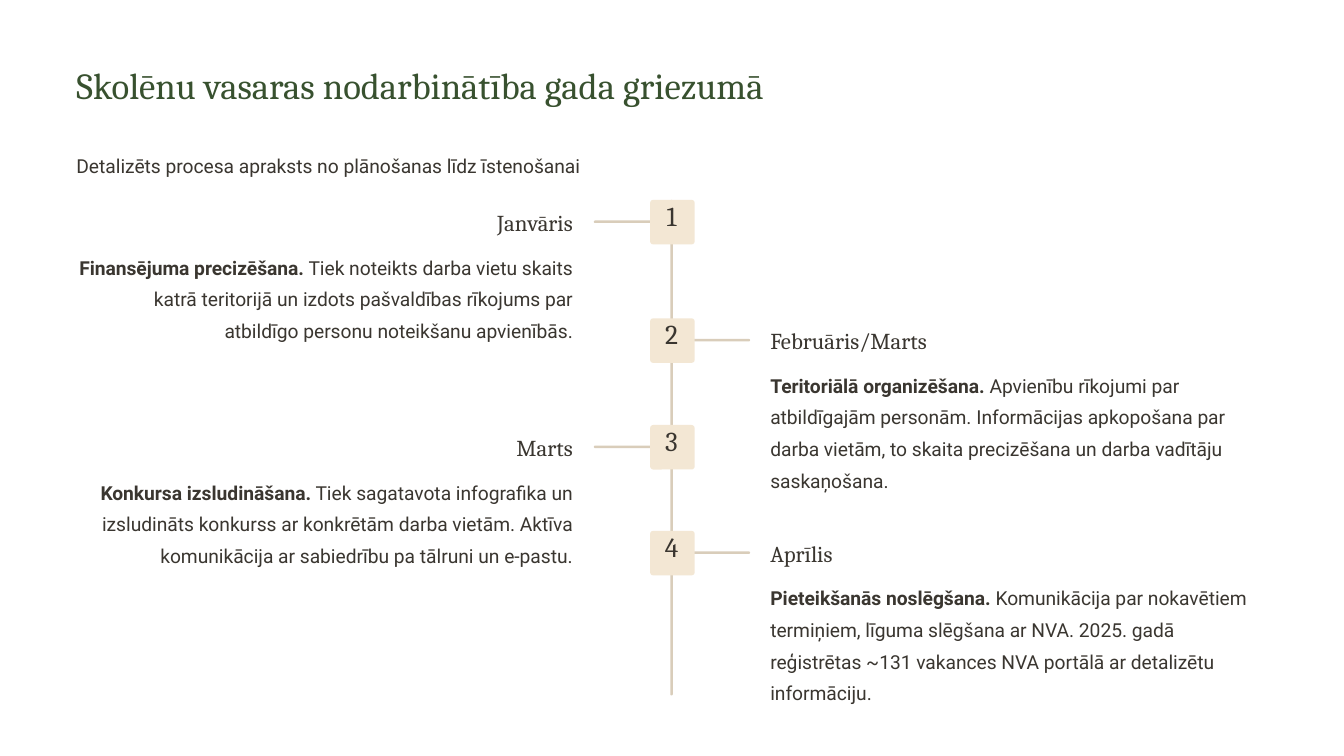
from pptx import Presentation
from pptx.dml.color import RGBColor
from pptx.enum import shapes, text
from pptx.util import Inches, Pt

GREEN, INK, LINE, BADGE = "38512F", "3A3630", "D9CDBA", "F3E7D4"
LEFT, RIGHT, CENTER = text.PP_ALIGN.LEFT, text.PP_ALIGN.RIGHT, text.PP_ALIGN.CENTER

deck = Presentation()
deck.slide_width, deck.slide_height = Inches(16), Inches(9)
slide = deck.slides.add_slide(deck.slide_layouts[6])


def add_text(box, runs, size, font, spacing, color=INK, align=LEFT):
    """Write one paragraph of (words, bold) runs; box is in inches, spacing in points."""
    frame = slide.shapes.add_textbox(*map(Inches, box)).text_frame
    frame.margin_left = frame.margin_right = frame.margin_top = frame.margin_bottom = 0
    frame.word_wrap = True
    paragraph = frame.paragraphs[0]
    paragraph.alignment = align
    paragraph.line_spacing = Pt(spacing)
    for words, bold in runs:
        run = paragraph.add_run()
        run.text = words
        run.font.size = Pt(size)
        run.font.name = font
        run.font.bold = bold
        run.font.color.rgb = RGBColor.from_string(color)


def add_rounded(box, color, rounding):
    shape = slide.shapes.add_shape(shapes.MSO_SHAPE.ROUNDED_RECTANGLE, *map(Inches, box))
    shape.adjustments[0] = rounding
    shape.shadow.inherit = False
    shape.fill.solid()
    shape.fill.fore_color.rgb = RGBColor.from_string(color)
    shape.line.fill.background()


add_text((0.91, 0.72, 9.34, 0.55), [("Skolēnu vasaras nodarbinātība gada griezumā", False)],
         31.5, "Cambria", 39.5, GREEN)
add_text((0.91, 1.74, 14.17, 0.38),
         [("Detalizēts procesa apraksts no plānošanas līdz īstenošanai", False)],
         16.5, "Roboto", 27)

# Top of the badge, month, step, description
steps = [
    (2.38, "Janvāris", "Finansējuma precizēšana.",
     " Tiek noteikts darba vietu skaits katrā teritorijā un izdots pašvaldības rīkojums "
     "par atbildīgo personu noteikšanu apvienībās."),
    (3.79, "Februāris/Marts", "Teritoriālā organizēšana.",
     " Apvienību rīkojumi par atbildīgajām personām. Informācijas apkopošana par darba "
     "vietām, to skaita precizēšana un darba vadītāju saskaņošana."),
    (5.06, "Marts", "Konkursa izsludināšana.",
     " Tiek sagatavota infografika un izsludināts konkurss ar konkrētām darba vietām. "
     "Aktīva komunikācija ar sabiedrību pa tālruni un e-pastu."),
    (6.32, "Aprīlis", "Pieteikšanās noslēgšana.",
     " Komunikācija par nokavētiem termiņiem, līguma slēgšana ar NVA. 2025. gadā "
     "reģistrētas ~131 vakances NVA portālā ar detalizētu informāciju."),
]

add_rounded((7.98, 2.38, 0.03, 5.9), LINE, 0.5)
for number, (top, month, step, description) in enumerate(steps, 1):
    if number % 2:
        branch_left, month_left, body_left, align = 7.07, 4.06, 0.91, RIGHT
    else:
        branch_left, month_left, body_left, align = 8.23, 9.17, 9.17, LEFT
    add_rounded((branch_left, top + 0.245, 0.7, 0.03), LINE, 0.5)
    add_rounded((7.74, top, 0.53, 0.53), BADGE, 0.067)
    add_text((7.83, top + 0.055, 0.33, 0.41), [(str(number), False)],
             23.5, "Cambria", 23.5, align=CENTER)
    add_text((month_left, top + 0.085, 2.76, 0.35), [(month, False)],
             19.5, "Cambria", 24.5, align=align)
    add_text((body_left, top + 0.565, 5.91, 1.5), [(step, True), (description, False)],
             16.5, "Roboto", 27, align=align)

deck.save("out.pptx")
